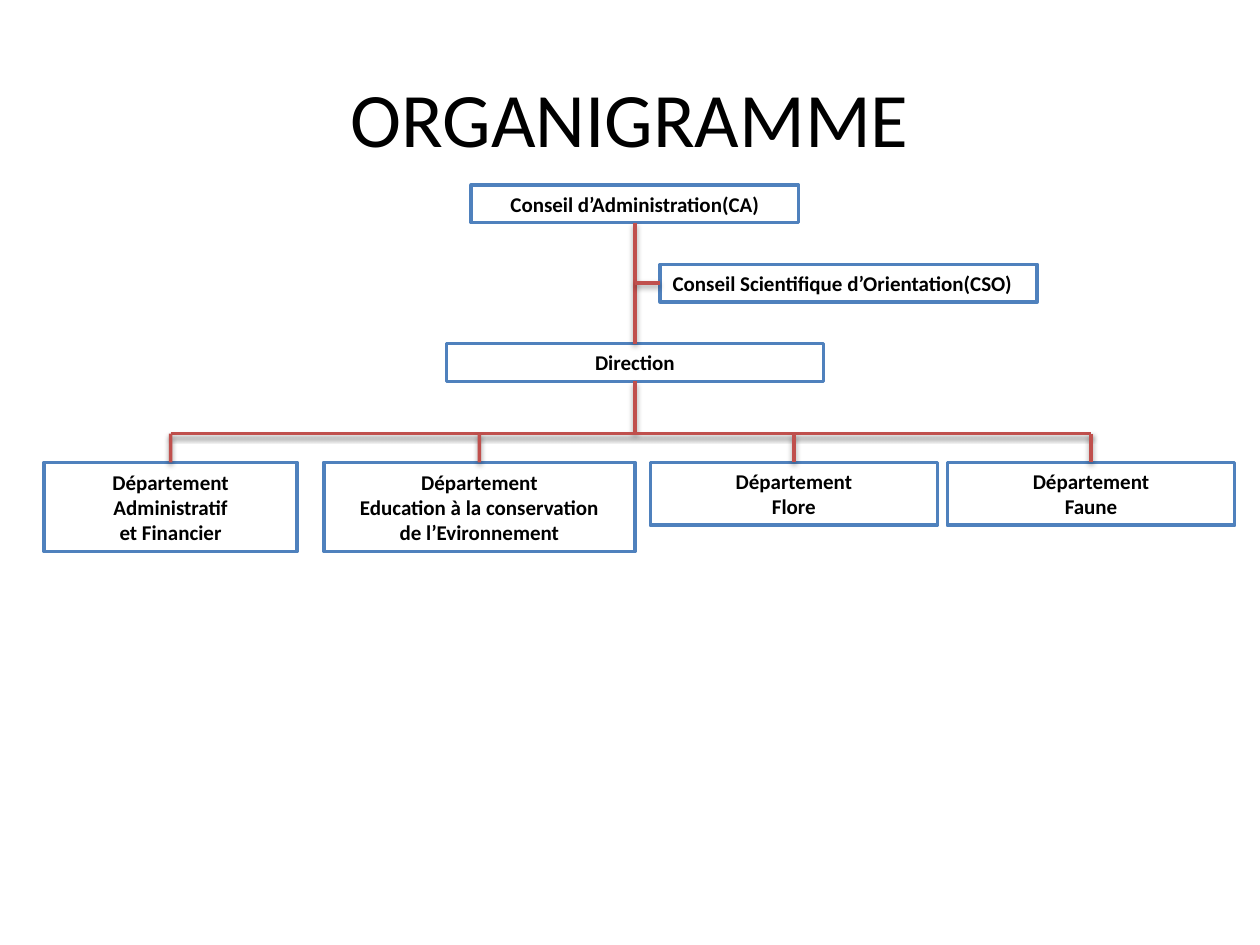
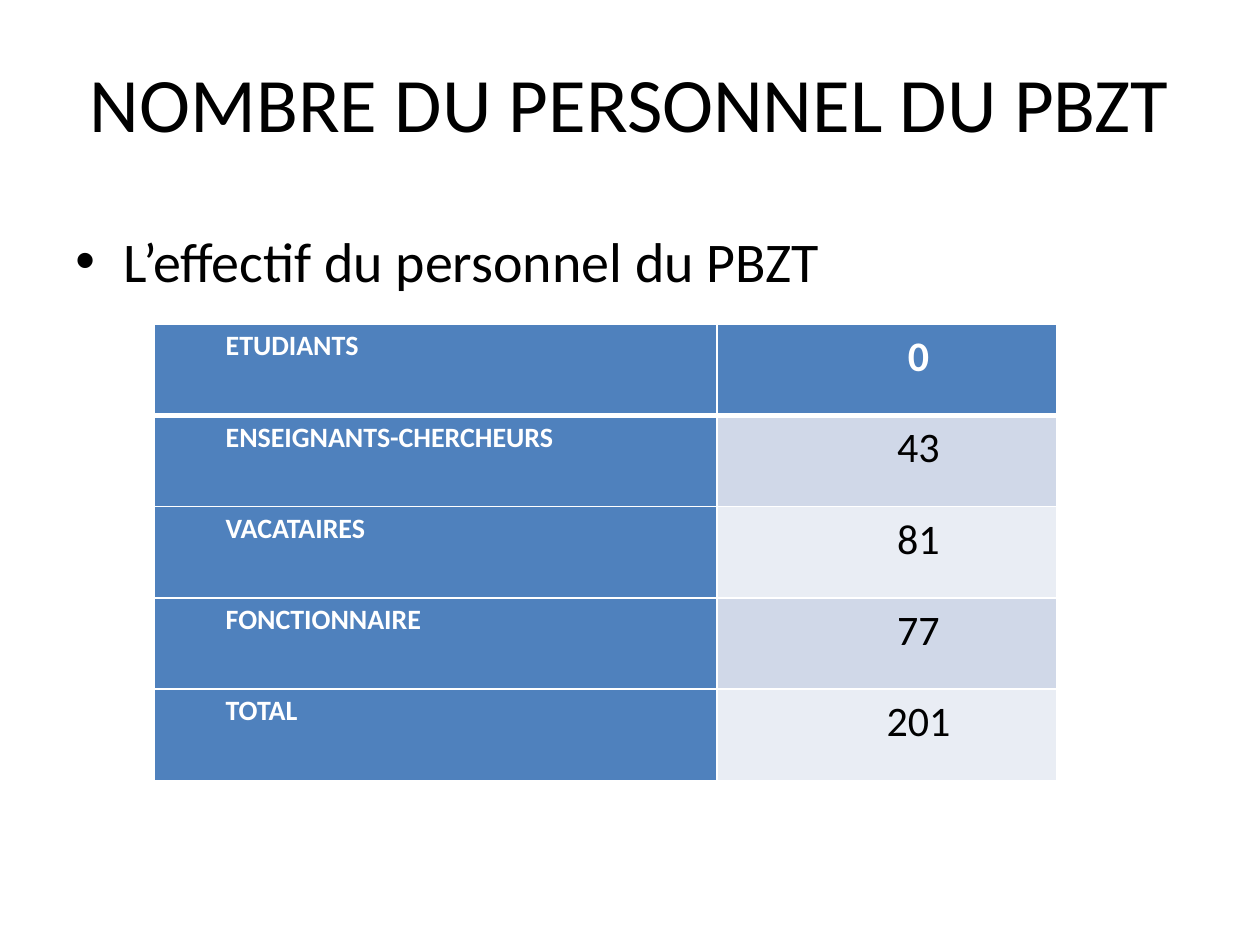
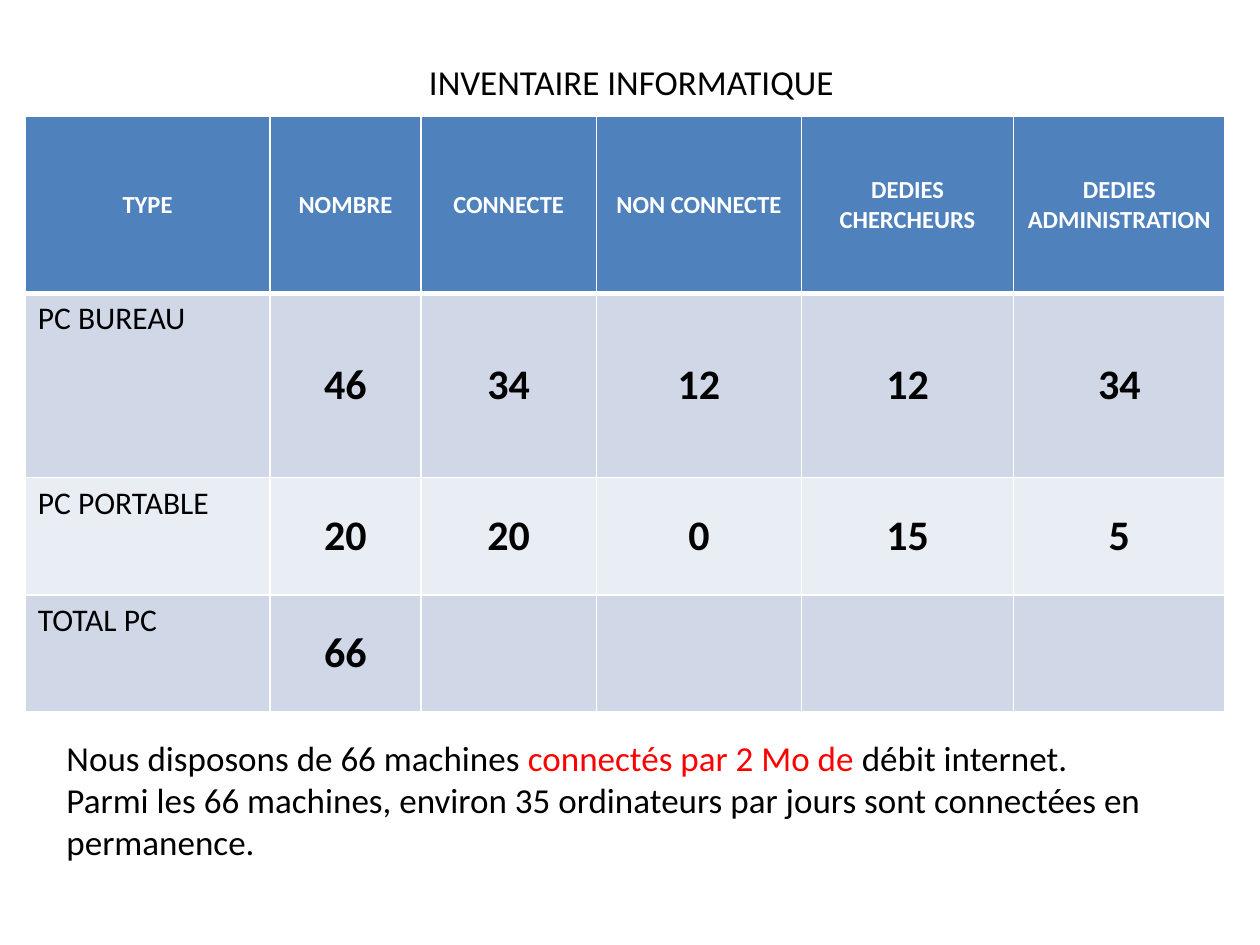
import dataclasses

import lxml.etree
import pptx
import pptx.dml.color
import pptx.enum.shapes
import pptx.enum.text
import pptx.oxml.ns
import pptx.util

ALIGN = pptx.enum.text.PP_ALIGN
ANCHOR = pptx.enum.text.MSO_ANCHOR
SIDE_TOP, SIDE_LEFT, SIDE_BOTTOM = 0, 1, 2


def rgb(value):
    return pptx.dml.color.RGBColor.from_string(value)


def cm(*values):
    return [pptx.util.Cm(v) for v in values]


def sub(parent, tag, **attributes):
    """Append a DrawingML child element."""
    e = lxml.etree.SubElement(parent, pptx.oxml.ns.qn(tag))
    for key, value in attributes.items():
        e.set(key, str(value))
    return e


@dataclasses.dataclass(frozen=True)
class Theme:
    font: str = "Calibri"
    text: str = "000000"
    paper: str = "FFFFFF"
    blue: str = "4F81BD"
    red: str = "C0504D"
    accent: str = "FF0000"
    bands: tuple = ("D0D8E8", "E9EDF4")
    title: int = 44
    body: int = 32
    figure: int = 24
    note: int = 20
    row_label: int = 18
    group_label: int = 16
    header: int = 14
    box: int = 12
    line: int = 2
    grid: int = 1
    header_rule: int = 3


class Deck:
    def __init__(self, theme):
        self.theme = theme
        self.prs = pptx.Presentation()
        self.prs.slide_width, self.prs.slide_height = cm(25.4, 19.05)
        self.s = None

    def slide(self):
        self.s = self.prs.slides.add_slide(self.prs.slide_layouts[6])

    def style(self, p, size, color=None, bold=False, align=ALIGN.LEFT):
        p.alignment = align
        for r in p.runs:
            r.font.name = self.theme.font
            r.font.size = pptx.util.Pt(size)
            r.font.bold = bold
            r.font.color.rgb = rgb(color or self.theme.text)

    def text(self, lines, at, size, align=ALIGN.LEFT, anchor=ANCHOR.TOP):
        sp = self.s.shapes.add_textbox(*cm(*at))
        tf = sp.text_frame
        tf.word_wrap = True
        tf.vertical_anchor = anchor
        tf.text = "\n".join(lines)
        for p in tf.paragraphs:
            self.style(p, size, align=align)
        return tf

    def title(self, text, at, size=None):
        self.text([text], at, size or self.theme.title, ALIGN.CENTER, ANCHOR.MIDDLE)

    def bullet(self, text, at):
        p = self.text([text], at, self.theme.body).paragraphs[0]
        self.indent(p, 0.97, -0.97)
        pPr = p._p.get_or_add_pPr()
        sub(pPr, "a:buFont", typeface="Arial")
        sub(pPr, "a:buChar", char="•")

    def indent(self, p, left, first=0):
        pPr = p._p.get_or_add_pPr()
        pPr.set("marL", str(pptx.util.Cm(left)))
        pPr.set("indent", str(pptx.util.Cm(first)))

    def box(self, text, at, align=ALIGN.CENTER):
        sp = self.s.shapes.add_shape(pptx.enum.shapes.MSO_SHAPE.RECTANGLE, *cm(*at))
        sp.shadow.inherit = False
        sp.fill.solid()
        sp.fill.fore_color.rgb = rgb(self.theme.paper)
        sp.line.color.rgb = rgb(self.theme.blue)
        sp.line.width = pptx.util.Pt(self.theme.line)
        tf = sp.text_frame
        tf.word_wrap = True
        tf.text = text
        for p in tf.paragraphs:
            self.style(p, self.theme.box, bold=True, align=align)
        return sp

    def line(self, x1, y1, x2, y2, begin=None, end=None):
        """Draw a shadowed line; begin and end are (shape, side) pairs."""
        c = self.s.shapes.add_connector(
            pptx.enum.shapes.MSO_CONNECTOR.STRAIGHT, *cm(x1, y1, x2, y2))
        if begin:
            c.begin_connect(*begin)
        if end:
            c.end_connect(*end)
        c.line.color.rgb = rgb(self.theme.red)
        c.line.width = pptx.util.Pt(self.theme.line)
        effects = sub(c._element.spPr, "a:effectLst")
        shadow = sub(effects, "a:outerShdw", blurRad=pptx.util.Pt(3.1),
                     dist=pptx.util.Pt(1.6), dir=90 * 60000, rotWithShape=0)
        sub(sub(shadow, "a:srgbClr", val="000000"), "a:alpha", val=38000)

    def table(self, left, top, widths, heights):
        frame = self.s.shapes.add_table(
            len(heights), len(widths), *cm(left, top, sum(widths), sum(heights)))
        table = frame.table
        table.horz_banding = False
        for column, width in zip(table.columns, cm(*widths)):
            column.width = width
        for row, height in zip(table.rows, cm(*heights)):
            row.height = height
        return table

    def cell(self, table, i, j, text, size, fill, color=None, bold=False,
             align=ALIGN.LEFT, anchor=ANCHOR.TOP):
        cell = table.cell(i, j)
        cell.vertical_anchor = anchor
        tcPr = cell._tc.get_or_add_tcPr()
        rules = {"L": self.theme.grid, "R": self.theme.grid,
                 "T": self.theme.header_rule if i == 1 else self.theme.grid,
                 "B": self.theme.header_rule if i == 0 else self.theme.grid}
        for side, width in rules.items():
            ln = sub(tcPr, "a:ln" + side, w=pptx.util.Pt(width))
            sub(sub(ln, "a:solidFill"), "a:srgbClr", val=self.theme.paper)
        cell.fill.solid()
        cell.fill.fore_color.rgb = rgb(fill)
        cell.text_frame.text = text
        self.style(cell.text_frame.paragraphs[0], size, color, bold, align)
        return cell


def organisation_slide(deck):
    deck.slide()
    deck.title("ORGANIGRAMME", (1.27, 0.76, 22.86, 3.18))

    # Governing bodies
    trunk_x, box_h, bus_y = 12.8, 0.76, 8.74
    council = deck.box("Conseil d’Administration(CA)", (9.5, 3.73, 6.6, box_h))
    science = deck.box("Conseil Scientifique d’Orientation(CSO)",
                       (13.31, 5.33, 7.6, box_h), ALIGN.LEFT)
    direction = deck.box("Direction", (9, 6.93, 7.6, box_h))

    # Departments: left, width, height, name
    departments = [
        (0.89, 5.1, 1.8, "Administratif\net Financier"),
        (6.53, 6.27, 1.8, "Education à la conservation\nde l’Evironnement"),
        (13.11, 5.79, 1.27, "Flore"),
        (19.1, 5.79, 1.27, "Faune"),
    ]
    top = 9.32
    centres = [left + width / 2 for left, width, _, _ in departments]
    boxes = [deck.box("Département\n" + name, (left, top, width, height))
             for left, width, height, name in departments]

    # Links
    science_y = 5.33 + box_h / 2
    deck.line(trunk_x, 4.49, trunk_x, 6.93,
              (council, SIDE_BOTTOM), (direction, SIDE_TOP))
    deck.line(trunk_x, 7.69, trunk_x, bus_y, begin=(direction, SIDE_BOTTOM))
    deck.line(trunk_x, science_y, 13.31, science_y, end=(science, SIDE_LEFT))
    deck.line(centres[0], bus_y, centres[-1], bus_y)
    for x, sp in zip(centres, boxes):
        deck.line(x, bus_y, x, top, end=(sp, SIDE_TOP))


def staff_slide(deck):
    t = deck.theme
    deck.slide()
    deck.title("NOMBRE DU PERSONNEL DU PBZT", (1.27, 0.76, 22.86, 2.57))
    deck.bullet("L’effectif du personnel du PBZT", (1.27, 4.45, 22.86, 12.57))

    # Head count by group
    staff = [("ETUDIANTS", "0"), ("ENSEIGNANTS-CHERCHEURS", "43"),
             ("VACATAIRES", "81"), ("FONCTIONNAIRE", "77"), ("TOTAL", "201")]
    table = deck.table(3.1, 6.53, [11.35, 6.86], [1.84] * len(staff))
    for i, (group, count) in enumerate(staff):
        first = i == 0
        cells = [
            deck.cell(table, i, 0, group, t.group_label, t.blue, t.paper, True),
            deck.cell(table, i, 1, count, t.figure,
                      t.blue if first else t.bands[(i - 1) % 2],
                      t.paper if first else t.text, first, ALIGN.CENTER),
        ]
        for cell in cells:
            cell.margin_left, cell.margin_top, cell.margin_right, cell.margin_bottom = cm(
                0.18, 0, 0.18, 0)
            p = cell.text_frame.paragraphs[0]
            p.line_spacing = 1.15
            deck.indent(p, 1.27)


def inventory_slide(deck):
    t = deck.theme
    deck.slide()
    deck.title("INVENTAIRE INFORMATIQUE", (1.3, 0.53, 22.86, 2.21), t.note)

    # Computers by type and use
    rows = [
        ["TYPE", "NOMBRE", "CONNECTE", "NON CONNECTE", "DEDIES CHERCHEURS",
         "DEDIES ADMINISTRATION"],
        ["PC BUREAU", "46", "34", "12", "12", "34"],
        ["PC PORTABLE", "20", "20", "0", "15", "5"],
        ["TOTAL PC", "66", "", "", "", ""],
    ]
    table = deck.table(0.51, 2.34, [4.93, 3.05, 3.53, 4.14, 4.27, 4.27],
                       [3.58, 3.71, 2.36, 2.36])
    centred = {"bold": True, "align": ALIGN.CENTER, "anchor": ANCHOR.MIDDLE}
    for i, row in enumerate(rows):
        band = t.bands[(i - 1) % 2]
        for j, value in enumerate(row):
            if i == 0:
                deck.cell(table, i, j, value, t.header, t.blue, t.paper, **centred)
            elif j == 0:
                deck.cell(table, i, j, value, t.row_label, band)
            else:
                deck.cell(table, i, j, value, t.figure, band, **centred)

    # Connection note, with the bandwidth picked out
    tf = deck.text(["Nous disposons de 66 machines ",
                    "Parmi les 66 machines, environ 35 ordinateurs par jours "
                    "sont connectées en permanence."],
                   (1.09, 14.73, 22.81, 2.82), t.note)
    p = tf.paragraphs[0]
    for text in ("connectés par 2 Mo de ", "débit internet."):
        p.add_run().text = text
    deck.style(p, t.note)
    p.runs[1].font.color.rgb = rgb(t.accent)


def main():
    deck = Deck(Theme())
    organisation_slide(deck)
    staff_slide(deck)
    inventory_slide(deck)
    deck.prs.save("out.pptx")


if __name__ == "__main__":
    main()
